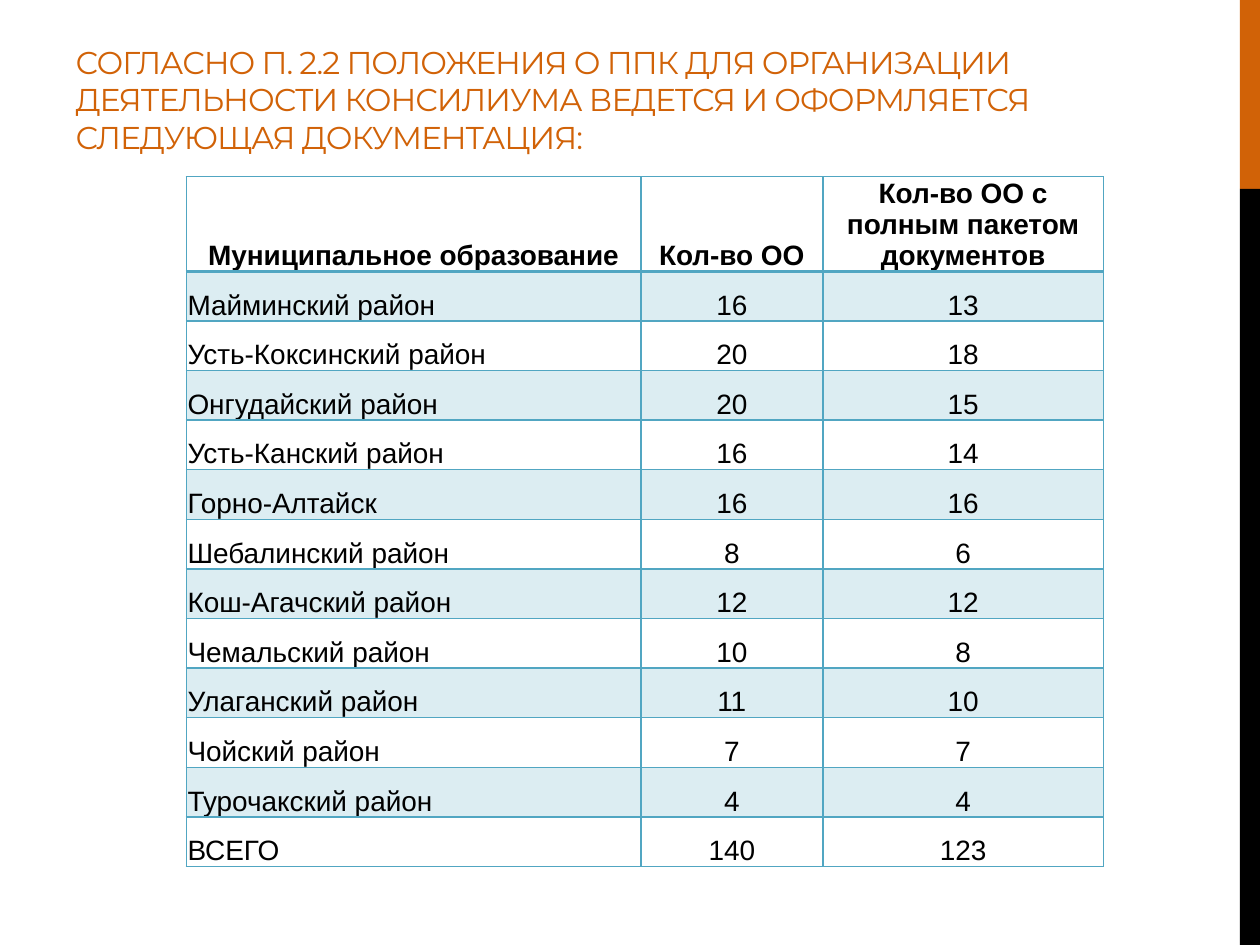
from typing import NamedTuple

from lxml.etree import SubElement
from pptx import Presentation
from pptx.dml.color import RGBColor
from pptx.enum.shapes import MSO_SHAPE
from pptx.enum.text import MSO_ANCHOR, MSO_AUTO_SIZE, PP_ALIGN
from pptx.oxml import parse_xml
from pptx.oxml.ns import nsdecls, qn
from pptx.util import Pt

ORANGE = RGBColor(0xD1, 0x62, 0x07)
BLACK = RGBColor(0x00, 0x00, 0x00)
TEAL = RGBColor(0x51, 0xA6, 0xC2)

TITLE = (
    "СОГЛАСНО П. 2.2 ПОЛОЖЕНИЯ О ППК ДЛЯ ОРГАНИЗАЦИИ ДЕЯТЕЛЬНОСТИ "
    "КОНСИЛИУМА ВЕДЕТСЯ И ОФОРМЛЯЕТСЯ СЛЕДУЮЩАЯ ДОКУМЕНТАЦИЯ:"
)
HEADERS = (
    "Муниципальное образование",
    "Кол-во ОО",
    "Кол-во ОО с полным пакетом документов",
)
COLUMN_WIDTHS = (259.7, 104, 160.4)
HEADER_HEIGHT = 54
ROW_HEIGHT = 28.35


class District(NamedTuple):
    name: str
    schools: int
    full_package: int


class SideBar(NamedTuple):
    top: float
    height: float
    color: RGBColor


DISTRICTS = (
    District("Майминский район", 16, 13),
    District("Усть-Коксинский район", 20, 18),
    District("Онгудайский район", 20, 15),
    District("Усть-Канский район", 16, 14),
    District("Горно-Алтайск", 16, 16),
    District("Шебалинский район", 8, 6),
    District("Кош-Агачский район", 12, 12),
    District("Чемальский район", 10, 8),
    District("Улаганский район", 11, 10),
    District("Чойский район", 7, 7),
    District("Турочакский район", 4, 4),
    District("ВСЕГО", 140, 123),
)
SIDE_BARS = (SideBar(0, 108, ORANGE), SideBar(108, 432, BLACK))


def draw_side_bar(slide, bar: SideBar) -> None:
    shape = slide.shapes.add_shape(
        MSO_SHAPE.RECTANGLE, Pt(708.5), Pt(bar.top), Pt(11.5), Pt(bar.height)
    )
    shape.shadow.inherit = False
    shape.fill.solid()
    shape.fill.fore_color.rgb = bar.color
    shape.line.fill.background()


def write_title(slide) -> None:
    title = slide.shapes.title
    title.left, title.top, title.width, title.height = Pt(36), Pt(14.4), Pt(630.7), Pt(100)
    frame = title.text_frame
    frame.word_wrap = True
    frame.auto_size = MSO_AUTO_SIZE.NONE
    frame.vertical_anchor = MSO_ANCHOR.BOTTOM
    frame.margin_bottom = Pt(25.2)
    heading = frame.paragraphs[0]
    heading.alignment = PP_ALIGN.LEFT
    heading.font.name = "Montserrat"
    heading.font.size = Pt(18)
    heading.font.color.rgb = ORANGE
    words = heading.add_run()
    words.text = TITLE
    words._r.get_or_add_rPr().set("spc", "-60")


def set_borders(cell, bottom_width: float) -> None:
    properties = cell._tc.get_or_add_tcPr()
    widths = {"lnL": 1, "lnR": 1, "lnT": 1, "lnB": bottom_width}
    for position, (side, width) in enumerate(widths.items()):
        border = parse_xml(
            f'<a:{side} {nsdecls("a")} w="{Pt(width)}"><a:solidFill>'
            f'<a:srgbClr val="{TEAL}"/></a:solidFill></a:{side}>'
        )
        properties.insert(position, border)


def fill_band(cell) -> None:
    """Fill the cell with teal at 20 % opacity."""
    cell.fill.solid()
    cell.fill.fore_color.rgb = TEAL
    color = cell._tc.tcPr.find(".//" + qn("a:srgbClr"))
    SubElement(color, qn("a:alpha")).set("val", "20000")


def write_cell(cell, text: str, row: int, column: int) -> None:
    is_header = row == 0
    cell.margin_left = cell.margin_right = cell.margin_top = Pt(0.7)
    cell.margin_bottom = Pt(0)
    cell.vertical_anchor = MSO_ANCHOR.BOTTOM
    if row % 2:
        fill_band(cell)
    else:
        cell.fill.background()
    set_borders(cell, bottom_width=2 if is_header else 1)

    cell.text = text
    paragraph = cell.text_frame.paragraphs[0]
    is_name = column == 0 and not is_header
    paragraph.alignment = PP_ALIGN.LEFT if is_name else PP_ALIGN.CENTER
    paragraph.font.name = "Arial"
    paragraph.font.size = Pt(16)
    paragraph.font.bold = is_header
    paragraph.font.color.rgb = BLACK


def draw_district_table(slide) -> None:
    rows = (HEADERS, *DISTRICTS)
    height = HEADER_HEIGHT + ROW_HEIGHT * len(DISTRICTS)
    table = slide.shapes.add_table(
        len(rows), len(HEADERS), Pt(106.5), Pt(101), Pt(sum(COLUMN_WIDTHS)), Pt(height)
    ).table
    table.first_row = False
    table.horz_banding = False
    for column, width in zip(table.columns, COLUMN_WIDTHS):
        column.width = Pt(width)
    for r, values in enumerate(rows):
        table.rows[r].height = Pt(ROW_HEIGHT if r else HEADER_HEIGHT)
        for c, value in enumerate(values):
            write_cell(table.cell(r, c), str(value), r, c)


def main() -> None:
    presentation = Presentation()
    presentation.slide_width, presentation.slide_height = Pt(720), Pt(540)
    slide = presentation.slides.add_slide(presentation.slide_layouts[5])
    for bar in SIDE_BARS:
        draw_side_bar(slide, bar)
    write_title(slide)
    draw_district_table(slide)
    presentation.save("out.pptx")


if __name__ == "__main__":
    main()
